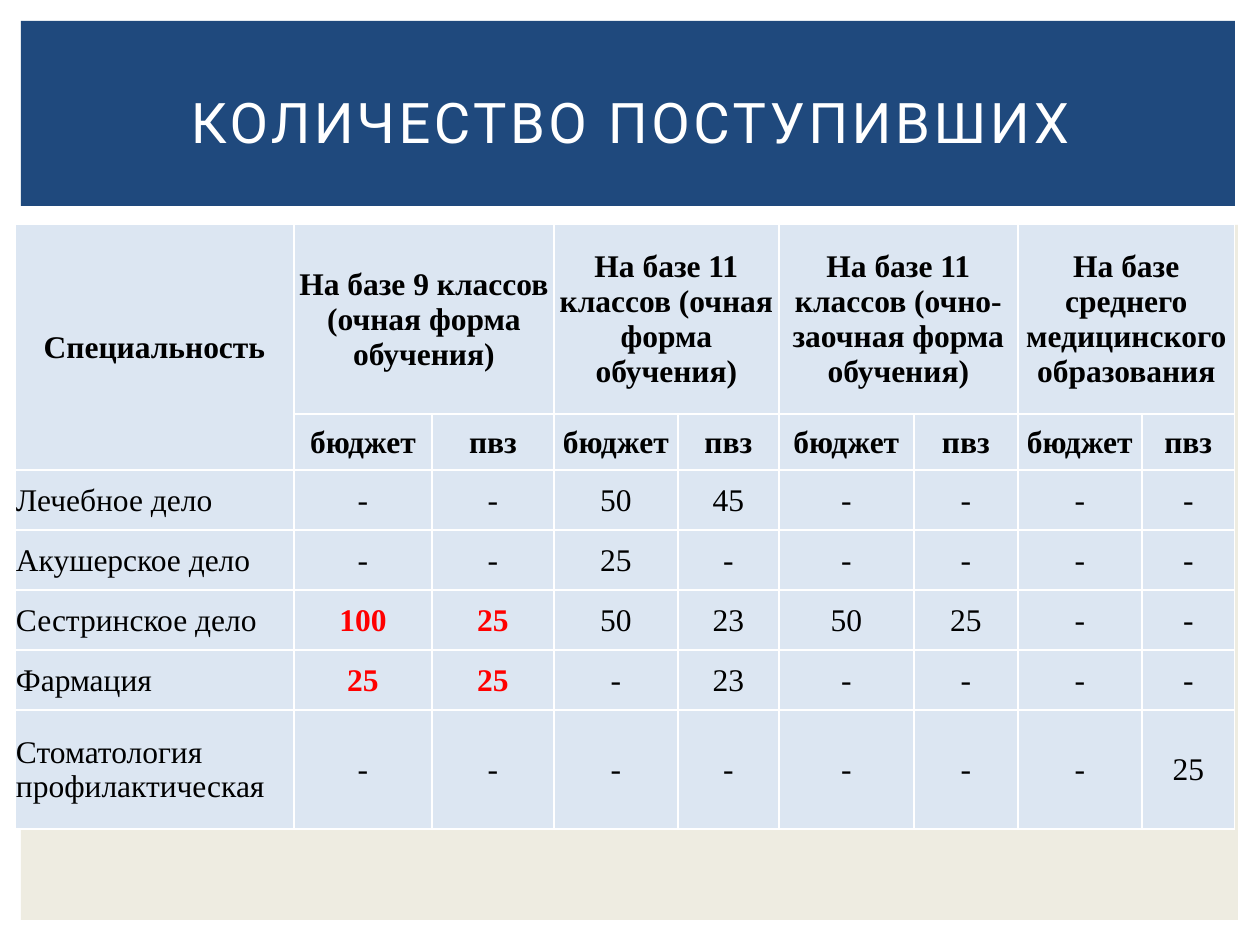
from dataclasses import dataclass

from lxml.etree import SubElement
from pptx import Presentation
from pptx.dml.color import RGBColor as RGB
from pptx.enum.shapes import MSO_SHAPE as Shape
from pptx.enum.text import MSO_ANCHOR as Anchor, MSO_AUTO_SIZE as AutoSize, PP_ALIGN as Align
from pptx.oxml.ns import qn
from pptx.util import Pt

EMU_PER_PX = 914400 / 126


@dataclass(frozen=True)
class Theme:
    """Colours, fonts and type sizes of the slide."""
    banner: str = "1F497D"
    panel: str = "EEECE1"
    cell: str = "DCE6F2"
    white: str = "FFFFFF"
    text: str = "000000"
    accent: str = "FF0000"
    title_font: str = "Roboto"
    table_font: str = "Times New Roman"
    title_size: int = 32
    table_size: int = 18
    border: int = 1


THEME = Theme()
TITLE = "КОЛИЧЕСТВО ПОСТУПИВШИХ"
GROUPS = [
    "На базе 9 классов (очная форма обучения)",
    "На базе 11 классов (очная форма обучения)",
    "На базе 11 классов (очно-заочная форма обучения)",
    "На базе среднего медицинского образования",
]
INTAKE = [
    ["Лечебное дело", "-", "-", "50", "45", "-", "-", "-", "-"],
    ["Акушерское дело", "-", "-", "25", "-", "-", "-", "-", "-"],
    ["Сестринское дело", "100", "25", "50", "23", "50", "25", "-", "-"],
    ["Фармация", "25", "25", "-", "23", "-", "-", "-", "-"],
    ["Стоматология профилактическая", "-", "-", "-", "-", "-", "-", "-", "25"],
]
COL_WIDTHS = [279, 138, 122, 124, 101, 135, 104, 124, 93]
ROW_HEIGHTS = [190, 56, 60, 60, 60, 60, 119]
HEADER_ROWS = 2


def px(n):
    """Turn pixels into EMU."""
    return round(n * EMU_PER_PX)


def format_run(r, font, size, color, bold=False):
    """Set the typeface, size, colour and weight of a run."""
    r.font.name = font
    r.font.size = Pt(size)
    r.font.color.rgb = RGB.from_string(color)
    r.font.bold = bold


def add_panel(s, x, y, w, h, color):
    """Add a plain filled rectangle."""
    sp = s.shapes.add_shape(Shape.RECTANGLE, px(x), px(y), px(w), px(h))
    sp.shadow.inherit = False
    sp.fill.solid()
    sp.fill.fore_color.rgb = RGB.from_string(color)
    sp.line.fill.background()


def set_title(s, text, x, y, w, h):
    """Fill the title placeholder and bring it in front of the panels."""
    sp = s.shapes.title
    sp.left, sp.top, sp.width, sp.height = px(x), px(y), px(w), px(h)
    tf = sp.text_frame
    tf.text = text
    tf.word_wrap = True
    tf.auto_size = AutoSize.NONE
    tf.vertical_anchor = Anchor.MIDDLE
    p = tf.paragraphs[0]
    p.alignment = Align.CENTER
    r = p.runs[0]
    format_run(r, THEME.title_font, THEME.title_size, THEME.white)
    r.font._element.set("spc", "200")
    sp.element.getparent().append(sp.element)


def set_borders(cell):
    """Draw the same thin line on all four sides of a cell."""
    tc_pr = cell._tc.get_or_add_tcPr()
    for side in ("lnL", "lnR", "lnT", "lnB"):
        ln = SubElement(tc_pr, qn(f"a:{side}"), w=str(Pt(THEME.border)))
        fill = SubElement(ln, qn("a:solidFill"))
        SubElement(fill, qn("a:srgbClr"), val=THEME.white)


def format_cell(cell, align, color, bold):
    """Set the borders, fill, margins and text style of a cell."""
    set_borders(cell)
    cell.fill.solid()
    cell.fill.fore_color.rgb = RGB.from_string(THEME.cell)
    cell.margin_left = cell.margin_right = cell.margin_top = px(1)
    cell.margin_bottom = 0
    cell.vertical_anchor = Anchor.MIDDLE
    p = cell.text_frame.paragraphs[0]
    p.alignment = align
    for r in p.runs:
        format_run(r, THEME.table_font, THEME.table_size, color, bold)


def table_texts():
    """Return the header and intake rows as one grid of texts."""
    groups = ["Специальность"]
    for group in GROUPS:
        groups += [group, ""]
    return [groups, [""] + ["бюджет", "пвз"] * len(GROUPS)] + INTAKE


def add_intake_table(s, x, y):
    """Add the table of intake by speciality and form of study."""
    size = px(sum(COL_WIDTHS)), px(sum(ROW_HEIGHTS))
    table = s.shapes.add_table(
        len(ROW_HEIGHTS), len(COL_WIDTHS), px(x), px(y), *size).table
    for col, width in zip(table.columns, COL_WIDTHS):
        col.width = px(width)
    for row, height in zip(table.rows, ROW_HEIGHTS):
        row.height = px(height)
    table.cell(0, 0).merge(table.cell(1, 0))
    for c in range(1, len(COL_WIDTHS), 2):
        table.cell(0, c).merge(table.cell(0, c + 1))
    for i, texts in enumerate(table_texts()):
        for j, text in enumerate(texts):
            cell = table.cell(i, j)
            cell.text_frame.text = text
            header = i < HEADER_ROWS
            marked = not header and j in (1, 2) and text != "-"
            align = Align.CENTER if header or j else Align.LEFT
            color = THEME.accent if marked else THEME.text
            format_cell(cell, align, color, header or marked)


def main():
    """Build and save the slide."""
    prs = Presentation()
    prs.slide_width, prs.slide_height = px(1260), px(945)
    s = prs.slides.add_slide(prs.slide_layouts[5])
    add_panel(s, 21, 225, 1217, 695, THEME.panel)
    add_panel(s, 21, 21, 1214, 185, THEME.banner)
    set_title(s, TITLE, 53, 49, 1155, 145)
    add_intake_table(s, 15, 224)
    prs.save("out.pptx")


if __name__ == "__main__":
    main()
